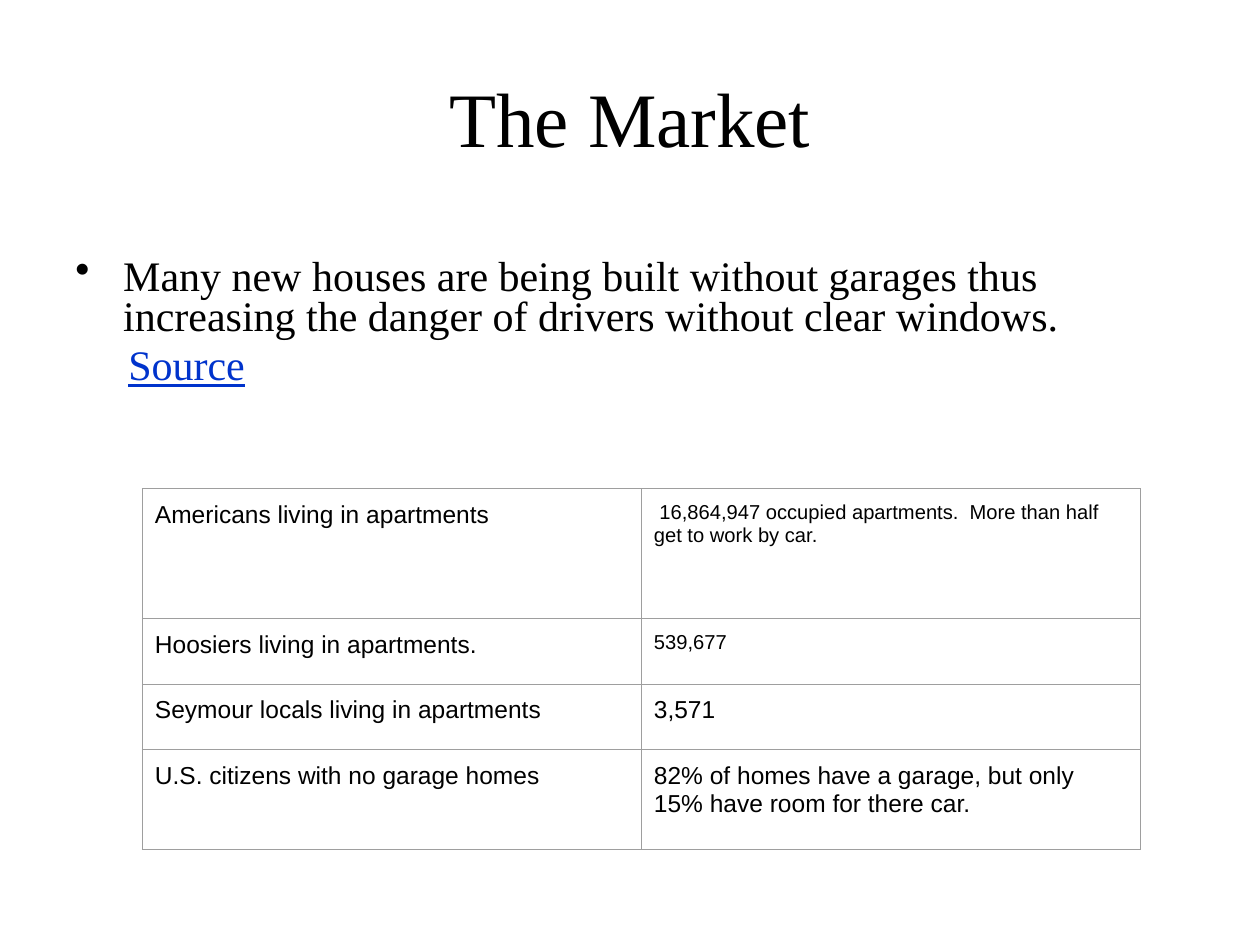
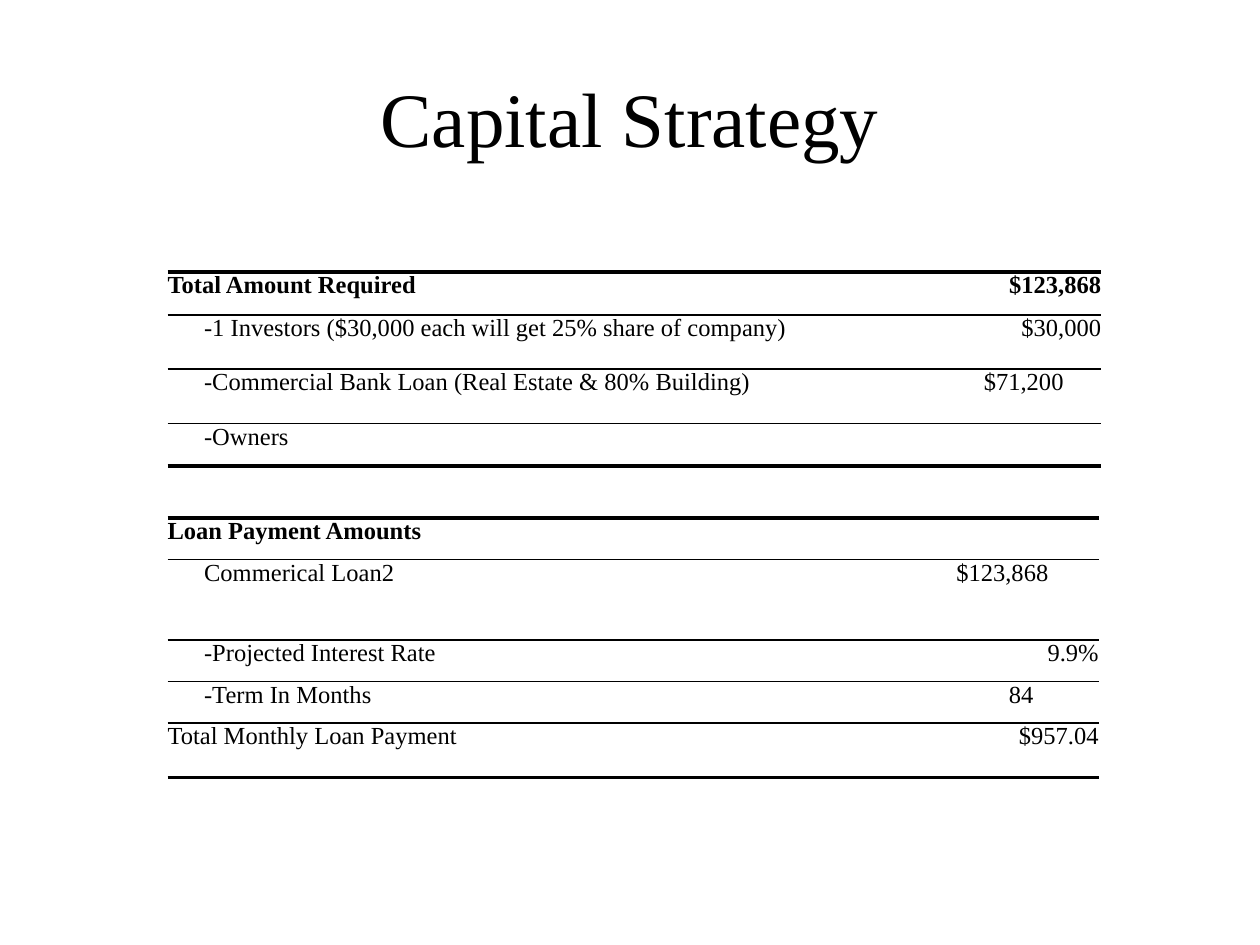
from lxml.etree import SubElement
from pptx import Presentation
from pptx.dml.color import RGBColor
from pptx.enum.text import MSO_ANCHOR as Anchor, PP_ALIGN as Align
from pptx.oxml import parse_xml
from pptx.oxml.ns import nsdecls, qn
from pptx.util import Inches, Pt

SERIF, SANS = "Times New Roman", "Arial"
BLACK, BLUE, GREY = "000000", "0033CC", "9E9E9E"
INDENT = 0.29


def color(value):
    """Turn a hex string into a colour."""
    return RGBColor.from_string(value)


class SlideBuilder:
    """Holds the deck's style and the current page."""

    def __init__(self):
        """Open an empty deck of 10 by 7.5 inches."""
        self.deck = Presentation()
        self.deck.slide_width, self.deck.slide_height = Inches(10), Inches(7.5)
        self.page = None

    def new_page(self, title):
        """Start a blank page with its centred title."""
        self.page = self.deck.slides.add_slide(self.deck.slide_layouts[6])
        frame = self.text_box(0.5, 0.3, 9, 1.25)
        frame.vertical_anchor = Anchor.MIDDLE
        self.fill_para(frame.paragraphs[0], title, 44, align=Align.CENTER)

    def text_box(self, left, top, width, height):
        """Add a wrapping text box and return its frame."""
        box = self.page.shapes.add_textbox(
            Inches(left), Inches(top), Inches(width), Inches(height))
        box.text_frame.word_wrap = True
        return box.text_frame

    def fill_para(self, para, text, size, font=SERIF, ink=BLACK, bold=False,
                  underline=False, align=Align.LEFT):
        """Fill a paragraph and format its runs."""
        para.text = text
        para.alignment = align
        for span in para.runs:
            span.font.name, span.font.size = font, Pt(size)
            span.font.bold, span.font.underline = bold, underline
            span.font.color.rgb = color(ink)

    def body_line(self, para, text, margin, bullet=False, **style):
        """Fill a tightly spaced body paragraph, bulleted if asked."""
        self.fill_para(para, text, 24, **style)
        para.line_spacing, para.space_before = 0.8, Pt(4.8)
        props = para._p.get_or_add_pPr()
        props.set("marL", str(Inches(margin)))
        if bullet:
            props.set("indent", str(-Inches(margin)))
            SubElement(props, qn("a:buChar"), char="•")

    def table(self, left, top, widths, heights):
        """Add an unstyled table and return it."""
        frame = self.page.shapes.add_table(
            len(heights), len(widths), Inches(left), Inches(top),
            Inches(sum(widths)), Inches(sum(heights)))
        grid = frame.table
        grid.first_row = grid.horz_banding = False
        for column, width in zip(grid.columns, widths):
            column.width = Inches(width)
        for row, height in zip(grid.rows, heights):
            row.height = Inches(height)
        return grid

    def cell(self, cell, text, size, inset, borders, ink, indent=0, **style):
        """Fill a cell; borders are left, right, top and bottom points."""
        cell.margin_left = Inches(inset + indent)
        cell.margin_right = cell.margin_top = cell.margin_bottom = Inches(inset)
        cell.fill.background()
        if text:
            self.fill_para(cell.text_frame.paragraphs[0], text, size, **style)
        props = cell._tc.get_or_add_tcPr()
        for place, (side, points) in enumerate(zip("LRTB", borders)):
            paint = (f'<a:solidFill><a:srgbClr val="{ink}"/></a:solidFill>'
                     if points else "<a:noFill/>")
            props.insert(place, parse_xml(
                f'<a:ln{side} {nsdecls("a")} w="{Pt(points)}">{paint}</a:ln{side}>'))

    def market_table(self, rows):
        """Add the boxed table of housing figures."""
        grid = self.table(1.13, 3.88, [3.96] * 2, [row[0] for row in rows])
        for index, (_, label, figure, size) in enumerate(rows):
            for column, (text, points) in enumerate([(label, 14), (figure, size)]):
                self.cell(grid.cell(index, column), text, points, 0.1,
                          [0.75] * 4, GREY, font=SANS)

    def ledger(self, top, label_width, rows):
        """Add a ruled ledger with heavy outer lines."""
        grid = self.table(1.33, top, [label_width, 1.23], [row[0] for row in rows])
        last = len(rows) - 1
        for index, (_, label, indent, amount, align, shift) in enumerate(rows):
            borders = (0, 0, 1 if index else 2.25, 1 if index < last else 2.25)
            style = {"size": 14, "inset": 0, "borders": borders,
                     "ink": BLACK, "bold": index == 0}
            self.cell(grid.cell(index, 0), label, indent=indent, **style)
            self.cell(grid.cell(index, 1), amount, indent=shift, align=align, **style)


def main():
    """Build both pages and save the deck."""
    builder = SlideBuilder()

    builder.new_page("The Market")
    body = builder.text_box(0.5, 2.01, 9, 1.4)
    builder.body_line(
        body.paragraphs[0],
        "Many new houses are being built without garages thus increasing "
        "the danger of drivers without clear windows.", 0.38, bullet=True)
    builder.body_line(body.add_paragraph(), "Source", 0.42, ink=BLUE, underline=True)
    builder.market_table([
        (1.03, "Americans living in apartments",
         " 16,864,947 occupied apartments.  More than half get to work by car.", 11.5),
        (0.52, "Hoosiers living in apartments.", "539,677", 11.5),
        (0.52, "Seymour locals living in apartments", "3,571", 14),
        (0.79, "U.S. citizens with no garage homes",
         "82% of homes have a garage, but only 15% have room for there car.", 14),
    ])

    builder.new_page("Capital Strategy")
    builder.ledger(2.16, 6.18, [
        (0.34, "Total Amount Required", 0, "$123,868", Align.RIGHT, 0),
        (0.43, "-1 Investors ($30,000 each will get 25% share of company)", INDENT,
         "$30,000", Align.RIGHT, 0),
        (0.43, "-Commercial Bank Loan (Real Estate & 80% Building)", INDENT,
         "$71,200", Align.CENTER, 0),
        (0.34, "-Owners", INDENT, "", Align.LEFT, 0),
    ])
    builder.ledger(4.11, 6.16, [
        (0.33, "Loan Payment Amounts", 0, "", Align.LEFT, 0),
        (0.64, "Commerical Loan2", INDENT, "$123,868", Align.LEFT, 0.1),
        (0.33, "-Projected Interest Rate", INDENT, "9.9%", Align.RIGHT, 0),
        (0.33, "-Term In Months", INDENT, "84", Align.CENTER, 0),
        (0.43, "Total Monthly Loan Payment", 0, "$957.04", Align.RIGHT, 0),
    ])
    builder.deck.save("out.pptx")


if __name__ == "__main__":
    main()
